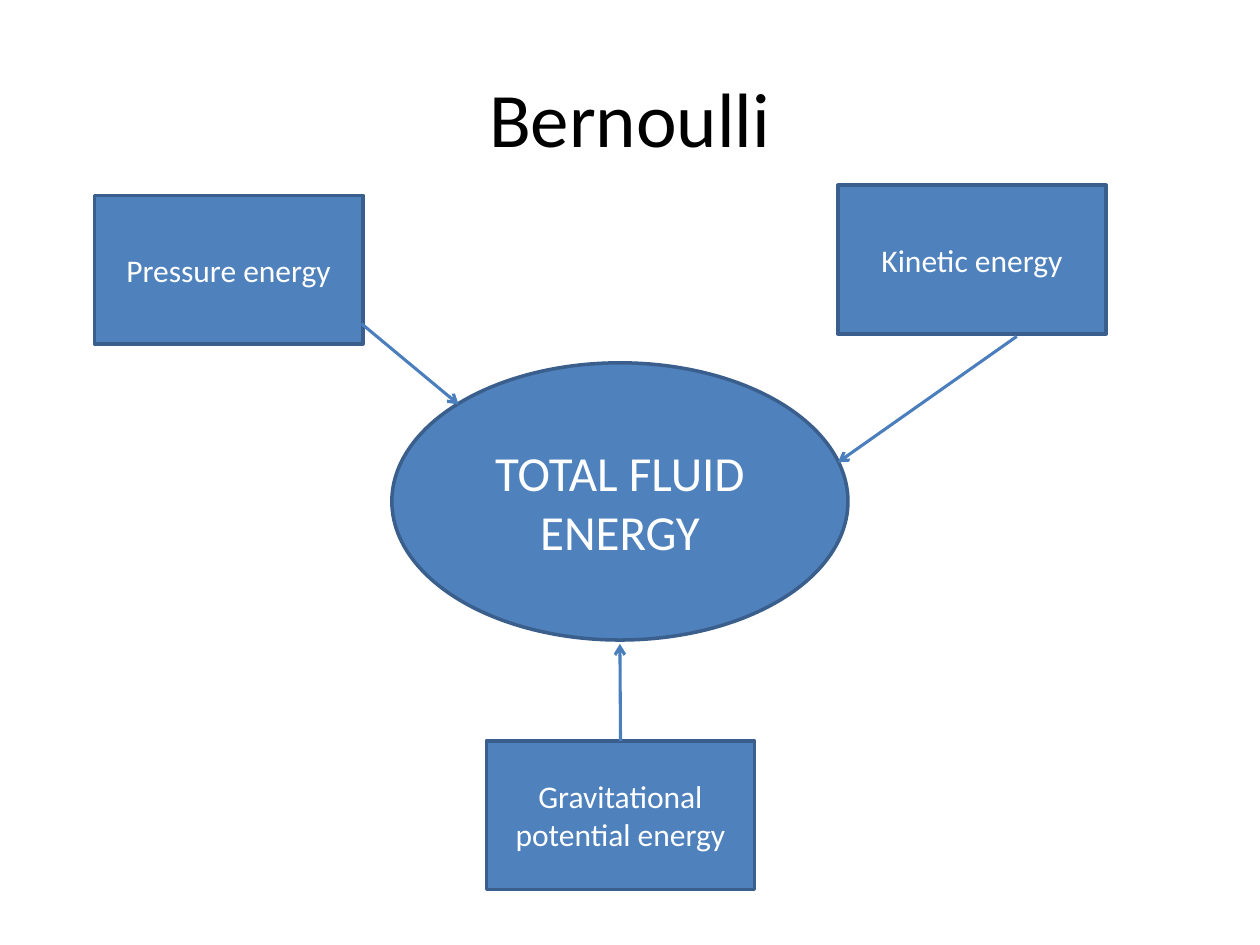
"""Build the Bernoulli slide: three energies feeding the total fluid energy."""
from dataclasses import dataclass

from pptx import Presentation
from pptx.dml.color import RGBColor
from pptx.enum.shapes import MSO_CONNECTOR as Connector, MSO_SHAPE as Shape
from pptx.enum.text import MSO_ANCHOR as Anchor, PP_ALIGN as Align
from pptx.oxml.ns import qn
from pptx.util import Inches, Pt
from lxml.etree import SubElement


@dataclass(frozen=True)
class Theme:
    font: str = "Calibri"
    black: RGBColor = RGBColor(0x00, 0x00, 0x00)
    white: RGBColor = RGBColor(0xFF, 0xFF, 0xFF)
    fill: RGBColor = RGBColor(0x4F, 0x81, 0xBD)
    outline: RGBColor = RGBColor(0x3A, 0x5F, 0x8C)
    arrow: RGBColor = RGBColor(0x4B, 0x7E, 0xBC)
    title_size: Pt = Pt(44)
    total_size: Pt = Pt(28)
    energy_size: Pt = Pt(18)
    outline_width: Pt = Pt(2)
    arrow_width: Pt = Pt(1.75)


theme = Theme()


def write(shape, text, size, color):
    frame = shape.text_frame
    frame.word_wrap = True
    frame.vertical_anchor = Anchor.MIDDLE
    para = frame.paragraphs[0]
    para.alignment = Align.CENTER
    span = para.add_run()
    span.text = text
    span.font.name = theme.font
    span.font.size = size
    span.font.color.rgb = color


def add_node(kind, left, top, width, height, text, size):
    node = page.shapes.add_shape(kind, Inches(left), Inches(top), Inches(width), Inches(height))
    node.shadow.inherit = False
    node.fill.solid()
    node.fill.fore_color.rgb = theme.fill
    node.line.color.rgb = theme.outline
    node.line.width = theme.outline_width
    write(node, text, size, theme.white)
    return node


deck = Presentation()
deck.slide_width = Inches(10)
deck.slide_height = Inches(7.5)
page = deck.slides.add_slide(deck.slide_layouts[6])

title = page.shapes.add_textbox(Inches(0.5), Inches(0.3), Inches(9), Inches(1.25))
write(title, "Bernoulli", theme.title_size, theme.black)

add_node(Shape.OVAL, 3.11, 2.88, 3.62, 2.2, "TOTAL FLUID ENERGY", theme.total_size)

energies = [
    ("Pressure energy", (0.75, 1.55), (2.87, 2.57), (3.64, 3.21), None),
    ("Kinetic energy", (6.65, 1.47), (8.07, 2.67), (6.65, 3.67), None),
    ("Gravitational potential energy", (3.86, 5.88), (4.92, 5.88), (4.92, 5.11), 0),
]
for name, (left, top), start, end, site in energies:
    box = add_node(Shape.RECTANGLE, left, top, 2.13, 1.18, name, theme.energy_size)
    arrow = page.shapes.add_connector(Connector.STRAIGHT, *map(Inches, start + end))
    if site is not None:
        arrow.begin_connect(box, site)
    arrow.line.color.rgb = theme.arrow
    arrow.line.width = theme.arrow_width
    SubElement(arrow.line._get_or_add_ln(), qn("a:tailEnd"), type="arrow")
    SubElement(arrow._element.spPr, qn("a:effectLst"))

deck.save("out.pptx")
